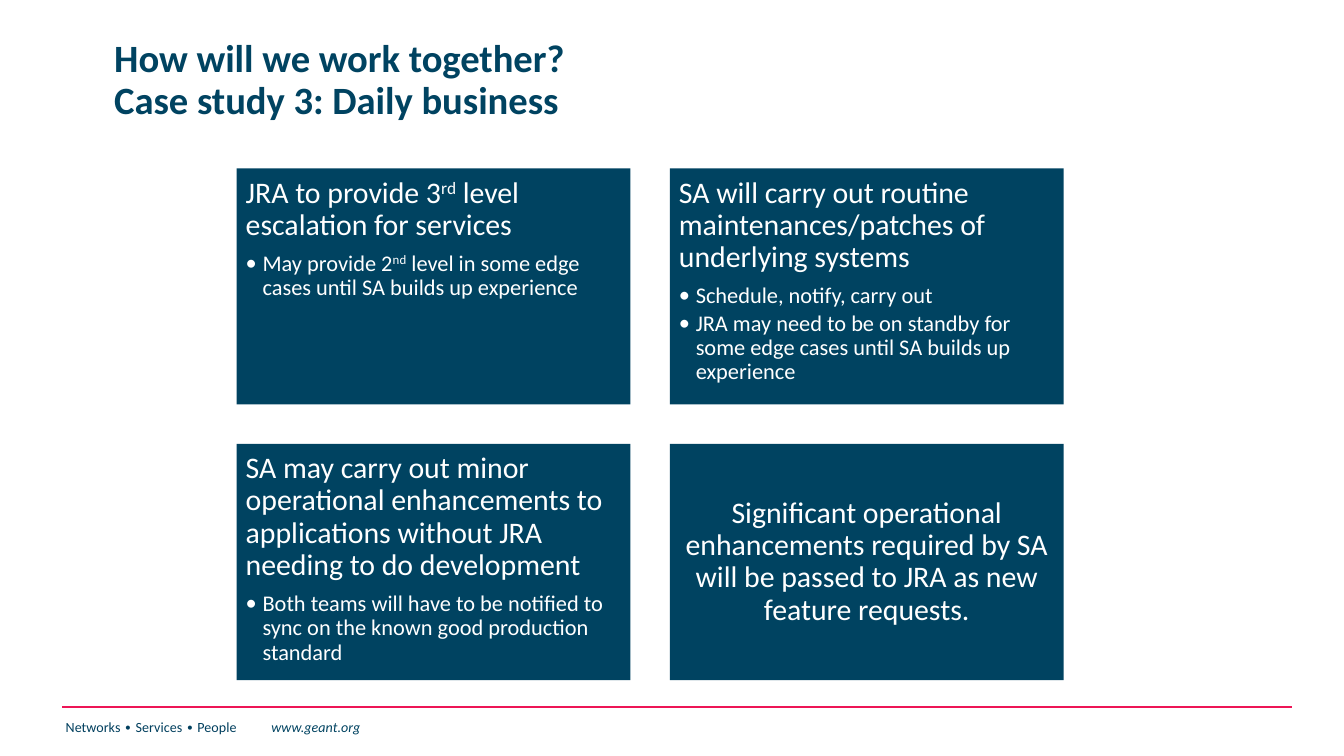
from lxml import etree
from pptx import Presentation
from pptx.dml.color import RGBColor
from pptx.enum.shapes import MSO_CONNECTOR, MSO_SHAPE
from pptx.enum.text import MSO_ANCHOR, MSO_AUTO_SIZE, PP_ALIGN
from pptx.oxml.ns import qn
from pptx.util import Inches, Pt

RECT, STRAIGHT = MSO_SHAPE.RECTANGLE, MSO_CONNECTOR.STRAIGHT
TOP, MIDDLE = MSO_ANCHOR.TOP, MSO_ANCHOR.MIDDLE
LEFT, CENTER = PP_ALIGN.LEFT, PP_ALIGN.CENTER
FIXED = MSO_AUTO_SIZE.NONE

FONT = "Calibri"
COLORS = {"navy": "004361", "footer": "003F5E", "rule": "ED1556", "white": "FFFFFF"}
COLS = 100  # grid columns across the slide; rows have the same pitch


class Deck:
    def __init__(self, width, height):
        self.prs = Presentation()
        self.prs.slide_width, self.prs.slide_height = Inches(width), Inches(height)
        self.unit = self.prs.slide_width / COLS
        self.slide = self.prs.slides.add_slide(self.prs.slide_layouts[5])

    def grid(self, *cells):
        return [round(c * self.unit) for c in cells]

    def color(self, name):
        return RGBColor.from_string(COLORS[name])

    def style(self, r, size, color, bold=False, italic=False):
        f = r.font
        f.name, f.size, f.bold, f.italic = FONT, Pt(size), bold, italic
        f.color.rgb = self.color(color)

    def title(self, text, box, size):
        sp = self.slide.shapes.title
        sp.left, sp.top, sp.width, sp.height = self.grid(*box)
        tf = sp.text_frame
        tf.text = text
        tf.auto_size, tf.vertical_anchor = FIXED, MIDDLE
        p = tf.paragraphs[0]
        p.alignment, p.line_spacing = LEFT, 0.9
        for r in p.runs:
            self.style(r, size, "navy", bold=True)

    def rule(self, x1, x2, y):
        line = self.slide.shapes.add_connector(STRAIGHT, *self.grid(x1, y, x2, y))
        line.line.color.rgb = self.color("rule")
        line.line.width = Pt(1)
        etree.SubElement(line._element.spPr, qn("a:effectLst"))

    def footer(self, motto, site, box, tab):
        tf = self.slide.shapes.add_textbox(*self.grid(*box)).text_frame
        tf.word_wrap = True
        p = tf.paragraphs[0]
        tabs = etree.SubElement(p._p.get_or_add_pPr(), qn("a:tabLst"))
        etree.SubElement(tabs, qn("a:tab"), pos=str(self.grid(tab)[0]), algn="l")
        for text, color, italic in ((motto + "\t", "footer", False), (site, "navy", True)):
            r = p.add_run()
            r.text = text
            self.style(r, 7.5, color, italic=italic)

    def paragraph(self, p, text, size, after, align):
        """Write one card paragraph; text between ^ marks is superscript."""
        p.alignment, p.line_spacing, p.space_after = align, 0.9, Pt(size * after)
        for i, part in enumerate(text.split("^")):
            r = p.add_run()
            r.text = part
            self.style(r, size, "white")
            if i % 2:
                r._r.get_or_add_rPr().set("baseline", "30000")

    def bullet(self, p):
        p.level = 1
        pPr = p._p.get_or_add_pPr()
        indent = self.grid(1.25)[0]
        pPr.set("marL", str(indent))
        pPr.set("indent", str(-indent))
        etree.SubElement(pPr, qn("a:buFont"), typeface=FONT)
        etree.SubElement(pPr, qn("a:buChar"), char="•")

    def card(self, box, heading, bullets):
        sp = self.slide.shapes.add_shape(RECT, *self.grid(*box))
        sp.shadow.inherit = False
        sp.fill.solid()
        sp.fill.fore_color.rgb = self.color("navy")
        sp.line.fill.background()
        tf = sp.text_frame
        tf.word_wrap = True
        tf.margin_left, tf.margin_top, tf.margin_right, tf.margin_bottom = self.grid(*[0.67] * 4)
        tf.vertical_anchor = TOP if bullets else MIDDLE
        self.paragraph(tf.paragraphs[0], heading, 16, 0.35, LEFT if bullets else CENTER)
        for text in bullets:
            p = tf.add_paragraph()
            self.bullet(p)
            self.paragraph(p, text, 12, 0.15, LEFT)


CARDS = [
    ("JRA to provide 3^rd^ level escalation for services",
     ["May provide 2^nd^ level in some edge cases until SA builds up experience"]),
    ("SA will carry out routine maintenances/patches of underlying systems",
     ["Schedule, notify, carry out",
      "JRA may need to be on standby for some edge cases until SA builds up experience"]),
    ("SA may carry out minor operational enhancements to applications without JRA "
     "needing to do development",
     ["Both teams will have to be notified to sync on the known good production standard"]),
    ("Significant operational enhancements required by SA will be passed to JRA "
     "as new feature requests.", []),
]


def main():
    deck = Deck(10, 10 * 9 / 16)

    # Footer
    deck.rule(4.65, 96.15, 52.6)
    deck.footer("Networks ∙ Services ∙ People", "www.geant.org", (3.9, 53, 34.1, 3.5), 15.3)

    # Title
    deck.title("How will we work together?\vCase study 3: Daily business",
               (7.5, 2.5, 66, 7.1), 20.7)

    # Two by two cards
    left, top, width, height, gap = 17.62, 12.52, 29.3, 17.58, 2.93
    for i, (heading, bullets) in enumerate(CARDS):
        row, col = divmod(i, 2)
        box = (left + col * (width + gap), top + row * (height + gap), width, height)
        deck.card(box, heading, bullets)

    deck.prs.save("out.pptx")


if __name__ == "__main__":
    main()
